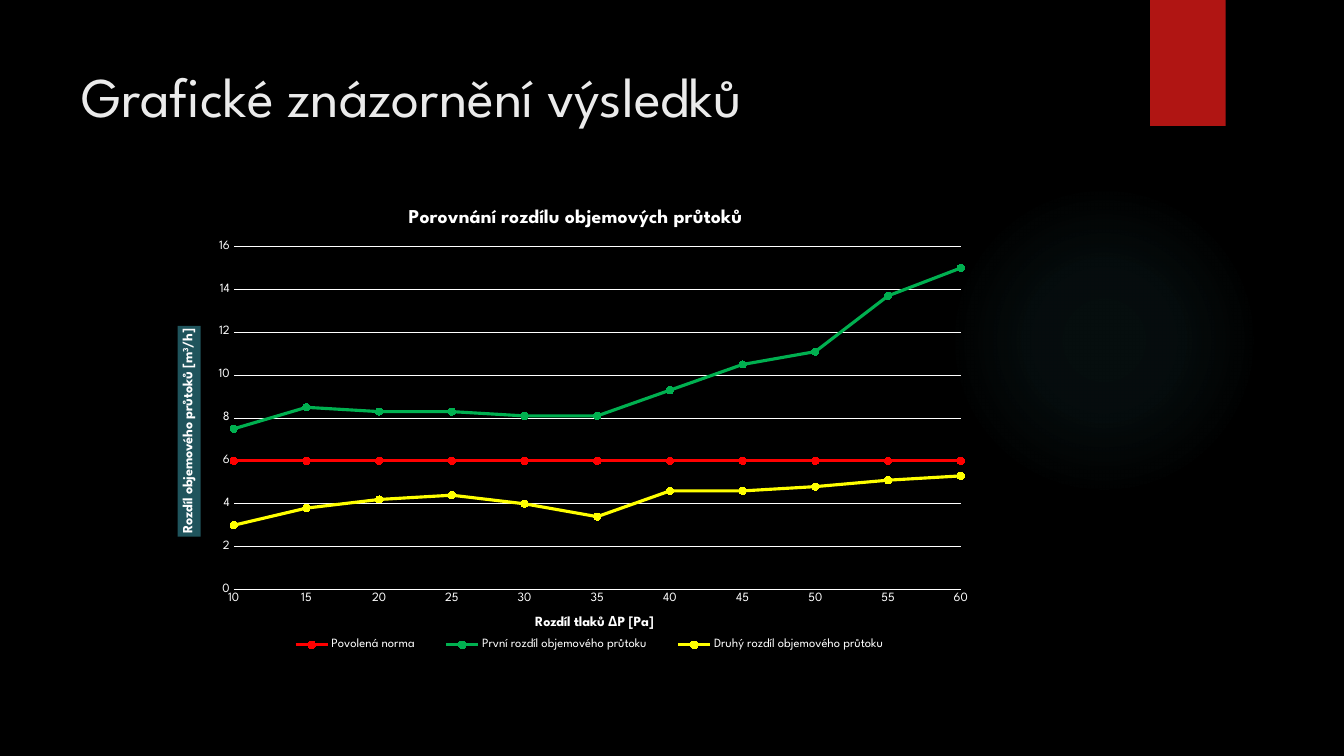
from lxml import etree
from pptx import Presentation
from pptx.chart.data import XyChartData
from pptx.dml.color import RGBColor
from pptx.enum.chart import (XL_CHART_TYPE, XL_LEGEND_POSITION, XL_MARKER_STYLE,
                             XL_TICK_MARK)
from pptx.enum.shapes import MSO_SHAPE
from pptx.enum.text import MSO_ANCHOR, PP_ALIGN
from pptx.oxml import parse_xml
from pptx.oxml.ns import nsdecls, qn
from pptx.util import Pt

FONT = "League Spartan"
COLORS = {"background": "000000", "heading": "EBEBEB", "ribbon": "B01513",
          "glow": "50B9C1", "text": "FFFFFF", "label_fill": "1F545C",
          "norm": "FF0000", "first": "00B050", "second": "FFFF00"}
PRESSURES = range(10, 65, 5)
FLOWS = [
    ("Povolená norma", "norm", [6] * len(PRESSURES)),
    ("První rozdíl objemového průtoku", "first",
     [7.5, 8.5, 8.3, 8.3, 8.1, 8.1, 9.3, 10.5, 11.1, 13.7, 15]),
    ("Druhý rozdíl objemového průtoku", "second",
     [3, 3.8, 4.2, 4.4, 4, 3.4, 4.6, 4.6, 4.8, 5.1, 5.3]),
]


def rgb(name):
    return RGBColor.from_string(COLORS[name])


def style_font(font, size, color="text", bold=False):
    font.name, font.size, font.bold = FONT, Pt(size), bold
    font.color.rgb = rgb(color)


def paint(fill, color):
    fill.solid()
    fill.fore_color.rgb = rgb(color)


def add_decoration(slide, kind, left, top, width, height, color):
    decoration = slide.shapes.add_shape(kind, Pt(left), Pt(top), Pt(width), Pt(height))
    decoration.shadow.inherit = False
    decoration.line.fill.background()
    paint(decoration.fill, color)
    return decoration


def fade_outwards(glow):
    """Replace the solid fill by a radial gradient of faint stops."""
    stops = "".join(
        f'<a:gs pos="{pos * 1000}"><a:srgbClr val="{COLORS["glow"]}">'
        f'<a:alpha val="{alpha * 1000}"/></a:srgbClr></a:gs>'
        for pos, alpha in [(0, 7), (36, 6), (69, 0), (100, 0)])
    gradient = parse_xml(
        f'<a:gradFill {nsdecls("a")} rotWithShape="1"><a:gsLst>{stops}</a:gsLst>'
        '<a:path path="circle"><a:fillToRect l="50000" t="50000" r="50000" b="50000"/>'
        '</a:path></a:gradFill>')
    solid = glow._element.spPr.find(qn("a:solidFill"))
    solid.getparent().replace(solid, gradient)


def place(part, index, x, y, w=None, h=None, inner=False):
    """Give a chart part a fixed place, in fractions of the chart."""
    layout = part.find(qn("c:layout"))
    if layout is None:
        layout = etree.Element(qn("c:layout"))
        part.insert(index, layout)
    manual = etree.SubElement(layout, qn("c:manualLayout"))
    settings = [("layoutTarget", "inner" if inner else None),
                ("xMode", "edge"), ("yMode", "edge"),
                ("x", x), ("y", y), ("w", w), ("h", h)]
    for tag, value in settings:
        if value is not None:
            etree.SubElement(manual, qn(f"c:{tag}")).set("val", str(value))


def set_title(title, pieces, size, x, y):
    """Write bold title runs; every second piece is superscript."""
    paragraph = title.text_frame.paragraphs[0]
    for number, piece in enumerate(pieces):
        run = paragraph.add_run()
        run.text = piece
        style_font(run.font, size, bold=True)
        if number % 2:
            run.font._element.set("baseline", "30000")
    place(title._element, 1, x, y)


def style_axis(axis, low, high, step):
    axis.minimum_scale, axis.maximum_scale, axis.major_unit = low, high, step
    axis.major_tick_mark = axis.minor_tick_mark = XL_TICK_MARK.NONE
    style_font(axis.tick_labels.font, 9)


def style_line(line, color, width):
    paint(line.fill, color)
    line.width = Pt(width)


def style_series(series, color):
    series.smooth = True
    style_line(series.format.line, color, 2.25)
    series.marker.style = XL_MARKER_STYLE.CIRCLE
    series.marker.size = 5
    paint(series.marker.format.fill, color)
    series.marker.format.line.fill.background()


def add_flow_chart(slide):
    flow_data = XyChartData()
    for name, _, values in FLOWS:
        flow = flow_data.add_series(name)
        for pressure, value in zip(PRESSURES, values):
            flow.add_data_point(pressure, value)
    chart = slide.shapes.add_chart(XL_CHART_TYPE.XY_SCATTER_SMOOTH, Pt(115.2), Pt(133.2),
                                   Pt(588.2), Pt(352.1), flow_data).chart
    style_font(chart.font, 10)
    chart.plots[0].vary_by_categories = False
    for series, (_, color, _) in zip(chart.plots[0].series, FLOWS):
        style_series(series, color)
    place(chart._chartSpace.chart.plotArea, 0, 0.088, 0.122, 0.883, 0.696, inner=True)

    # Axes
    pressure_axis, flow_axis = chart.category_axis, chart.value_axis
    style_axis(pressure_axis, 10, 60, 5)
    pressure_axis.has_major_gridlines = False
    style_line(pressure_axis.format.line, "text", 0.75)
    style_axis(flow_axis, 0, 16, 2)
    flow_axis.format.line.fill.background()
    style_line(flow_axis.major_gridlines.format.line, "text", 0.75)

    # Titles
    chart.has_title = True
    set_title(chart.chart_title, ["Porovnání rozdílu objemových průtoků"], 14, 0.296, 0.035)
    set_title(pressure_axis.axis_title, ["Rozdíl tlaků ΔP [Pa]"], 10, 0.451, 0.865)
    flow_title = flow_axis.axis_title
    set_title(flow_title, ["Rozdíl objemového průtoků [m", "3", "/h]"], 10, 0.02, 0.283)
    paint(flow_title.format.fill, "label_fill")
    flow_title._element.find(".//" + qn("a:bodyPr")).set("rot", "-5400000")

    # Legend
    chart.has_legend = True
    chart.legend.position = XL_LEGEND_POSITION.BOTTOM
    chart.legend.include_in_layout = False
    style_font(chart.legend.font, 9)
    place(chart.legend._element, 1, 0.13, 0.9, 0.78, 0.06)


def set_heading(slide, text):
    heading = slide.shapes.title
    heading.left, heading.top, heading.width, heading.height = Pt(51), Pt(36), Pt(610.5), Pt(64)
    frame = heading.text_frame
    frame.text = text
    frame.vertical_anchor = MSO_ANCHOR.MIDDLE
    frame.paragraphs[0].alignment = PP_ALIGN.LEFT
    style_font(frame.paragraphs[0].runs[0].font, 40, "heading")


def main():
    deck = Presentation()
    deck.slide_width, deck.slide_height = Pt(960), Pt(540)
    slide = deck.slides.add_slide(deck.slide_layouts[5])
    paint(slide.background.fill, "background")

    # Backdrop
    fade_outwards(add_decoration(slide, MSO_SHAPE.OVAL, 677.5, 131.8, 221.8, 221.8, "glow"))
    add_decoration(slide, MSO_SHAPE.RECTANGLE, 821.5, 0, 54, 90, "ribbon")

    # Content
    set_heading(slide, "Grafické znázornění výsledků")
    add_flow_chart(slide)
    deck.save("out.pptx")


if __name__ == "__main__":
    main()
